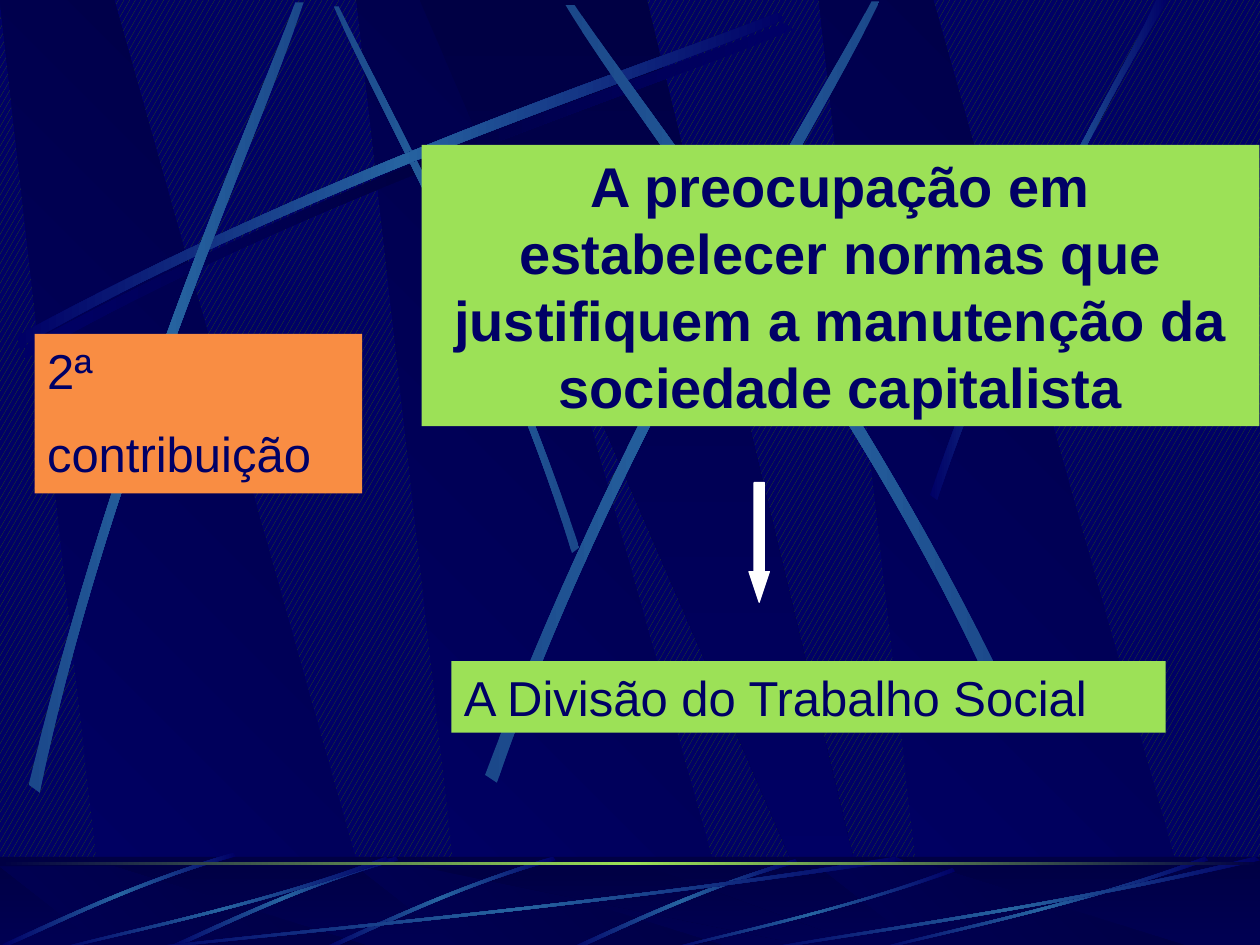
from copy import deepcopy

from lxml import etree
from pptx import Presentation
from pptx.dml.color import RGBColor
from pptx.enum.dml import MSO_PATTERN
from pptx.enum.shapes import MSO_SHAPE
from pptx.enum.text import MSO_ANCHOR, PP_ALIGN
from pptx.oxml.ns import qn
from pptx.util import Cm, Pt

RECT, DOWN_ARROW = MSO_SHAPE.RECTANGLE, MSO_SHAPE.DOWN_ARROW
CONFETTI = MSO_PATTERN.LARGE_CONFETTI
LEFT, CENTER = PP_ALIGN.LEFT, PP_ALIGN.CENTER
TOP = MSO_ANCHOR.TOP

NAVY = RGBColor(0x00, 0x00, 0x66)
MIDNIGHT = RGBColor(0x00, 0x00, 0x44)
STEEL = RGBColor(0x26, 0x63, 0xA0)
DEEP_STEEL = RGBColor(0x1B, 0x48, 0x8A)
OLIVE = RGBColor(0x2D, 0x55, 0x13)
GREEN = RGBColor(0x9C, 0xE1, 0x57)
ORANGE = RGBColor(0xF9, 0x8D, 0x43)
WHITE = RGBColor(0xFF, 0xFF, 0xFF)

GLOW = (NAVY, STEEL, NAVY)
SOFT_GLOW = (DEEP_STEEL, STEEL, DEEP_STEEL)
SHADE = (NAVY, MIDNIGHT, NAVY)

SLAB = [(0.28, 1), (1, 1), (0.3, 0), (0, 0)]
WEDGE = [(0, 0), (0.9, 1), (1, 1), (0.5, 0)]
ARC = [(0, 0.96), (0.43, 0.43), (0.83, 0.15), (0.99, 0),
       (1, 0.02), (0.83, 0.19), (0.38, 0.5), (0, 1)]
SHAFT = [(0, 0.99), (0.32, 0.53), (0.8, 0.16), (0.97, 0),
         (1, 0), (0.84, 0.17), (0.29, 0.58), (0.04, 1)]
STREAK = [(0, 0.99), (0.35, 0.52), (0.81, 0.16), (0.98, 0),
          (1, 0), (0.84, 0.17), (0.32, 0.57), (0.03, 1)]
GLINT = [(0, 0.99), (0.4, 0.44), (0.79, 0.17), (0.95, 0),
         (1, 0), (0.52, 0.37), (0.16, 0.81), (0.03, 1)]
SWEEP = [(0.99, 0), (0.54, 0.33), (0.16, 0.8), (0, 0.97),
         (0.01, 1), (0.17, 0.84), (0.58, 0.31), (1, 0.04)]
BLADE = [(1, 0.04), (0.57, 0.57), (0.17, 0.85), (0.01, 1),
         (0, 0.99), (0.17, 0.81), (0.62, 0.51), (0.99, 0)]


def paint(sp, colors, angle=0):
    """Fill a shape with one colour or evenly spaced gradient colours."""
    sp.shadow.inherit = False
    sp.line.fill.background()
    if len(colors) == 1:
        sp.fill.solid()
        sp.fill.fore_color.rgb = colors[0]
        return
    sp.fill.gradient()
    sp.fill.gradient_angle = angle
    stops = sp.element.spPr.find(".//" + qn("a:gsLst"))
    for _ in colors[2:]:
        stops.append(deepcopy(stops[0]))
    for i, (stop, color) in enumerate(zip(sp.fill.gradient_stops, colors)):
        stop.position = i / (len(colors) - 1)
        stop.color.rgb = color


def add_block(s, x, y, w, h, *colors, angle=0, kind=RECT):
    """Add a preset shape."""
    sp = s.shapes.add_shape(kind, Cm(x), Cm(y), Cm(w), Cm(h))
    paint(sp, colors, angle)
    return sp


def add_outline(s, points, x, y, w, h, *colors, angle=0, flip=False):
    """Add a closed outline whose unit points are scaled to the box."""
    pts = [(Cm(x + w * (1 - u if flip else u)), Cm(y + h * v)) for u, v in points]
    builder = s.shapes.build_freeform(*pts[0])
    builder.add_line_segments(pts[1:], close=True)
    sp = builder.convert_to_shape()
    paint(sp, colors, angle)
    return sp


def add_ribbon(s, points, x, y, w, h, *colors, flip=False):
    """Add a band whose two long edges are cubic curves."""
    sp = add_outline(s, points, x, y, w, h, *colors, flip=flip)
    lines = sp.element.spPr.findall(".//" + qn("a:lnTo"))
    for edge in (lines[:3], lines[4:]):
        cubic = etree.Element(qn("a:cubicBezTo"))
        edge[0].addprevious(cubic)
        for line in edge:
            cubic.append(line[0])
            line.getparent().remove(line)


def add_text(sp, text, size=28, bold=False, align=LEFT, color=NAVY, space=14):
    """Write one paragraph per line of text."""
    tf = sp.text_frame
    tf.word_wrap = True
    tf.vertical_anchor = TOP
    for i, line in enumerate(text.split("\n")):
        p = tf.add_paragraph() if i else tf.paragraphs[0]
        p.alignment = align
        if i:
            p.space_before = Pt(space)
        r = p.add_run()
        r.text = line
        r.font.name, r.font.size, r.font.bold = "Arial", Pt(size), bold
        r.font.color.rgb = color


def draw_slabs(s, x, y, h):
    """Draw the slanted shadows over a band of the given height."""
    for dx in (7.19, 0, 16.51):
        add_outline(s, SLAB, x + dx, y, 7.67, h, NAVY, MIDNIGHT, angle=45)
    add_outline(s, WEDGE, x + 8.46, y, 9.17, h, MIDNIGHT, NAVY, angle=270)


def draw_beams(s, x, y):
    """Draw the large light beams."""
    draw_slabs(s, x, y, 19.1)
    add_ribbon(s, ARC, x + 0.51, y + 0.46, 15.47, 6.78, *SHADE)
    add_ribbon(s, STREAK, x + 6.73, y + 0.13, 4.95, 11.02, *SOFT_GLOW, flip=True)
    add_ribbon(s, ARC, x + 0.36, y + 0.25, 15.47, 6.78, *GLOW)
    add_ribbon(s, SHAFT, x + 0.58, y + 0.05, 5.54, 15.93, *SOFT_GLOW)
    add_ribbon(s, STREAK, x + 9.78, y + 0.03, 7.95, 15.75, *SOFT_GLOW)
    add_ribbon(s, STREAK, x + 11.4, y + 0.1, 9.07, 14.3, *SOFT_GLOW, flip=True)
    add_ribbon(s, GLINT, x + 18.75, y, 4.8, 10.08, *GLOW)


def draw_footer(s, x, y, w, h):
    """Draw the bottom band with its ribbons and rule."""
    add_block(s, x, y, w, h, MIDNIGHT, NAVY, angle=270)
    draw_slabs(s, x, y + 0.2, h - 0.22)
    veil = add_block(s, x, y, w, h, MIDNIGHT)
    color = veil.element.spPr.find(".//" + qn("a:srgbClr"))
    etree.SubElement(color, qn("a:alpha"), val="50000")
    for dx, dy in ((11.38, 0.05), (6.5, 0), (3.33, 0), (0.05, -0.08)):
        add_ribbon(s, SWEEP, x + dx, y + dy, 4.7, 1.9, *GLOW)
    for dx, dy, width in ((2.54, 0, 15.67), (1.07, 0, 6.78), (13.39, 0.23, 5.87),
                          (17.58, 0, 6.78), (15.24, 0, 10.16)):
        add_ribbon(s, BLADE, x + dx, y + dy, width, h - dy, *GLOW)
    add_block(s, x, y + 0.1, w, 0.06, MIDNIGHT, GREEN, MIDNIGHT)


def draw_content(s, x, y):
    """Draw the label, the statement, the conclusion and the arrow."""
    add_text(add_block(s, x, y + 3.81, 6.6, 3.22, ORANGE), "2ª\ncontribuição")
    add_text(add_block(s, x + 7.8, y, 16.89, 5.67, GREEN),
             "A preocupação em estabelecer normas que justifiquem "
             "a manutenção da sociedade capitalista",
             size=32, bold=True, align=CENTER)
    add_text(add_block(s, x + 8.4, y + 10.41, 14.4, 1.44, GREEN),
             "A Divisão do Trabalho Social")
    arrow = add_block(s, x + 14.4, y + 6.81, 0.41, 2.41, WHITE, kind=DOWN_ARROW)
    arrow.adjustments[0], arrow.adjustments[1] = 0.5, 1.5
    arrow.line.color.rgb = WHITE
    arrow.line.width = Pt(0.75)


def main():
    """Build and save the slide."""
    prs = Presentation()
    prs.slide_width, prs.slide_height = Cm(25.4), Cm(19.05)
    s = prs.slides.add_slide(prs.slide_layouts[6])
    fill = s.background.fill
    fill.patterned()
    fill.pattern = CONFETTI
    fill.fore_color.rgb = OLIVE
    fill.back_color.rgb = NAVY
    draw_beams(s, 0, 0)
    draw_footer(s, 0, 17.27, 25.4, 1.9)
    draw_content(s, 0.7, 2.92)
    prs.save("out.pptx")


if __name__ == "__main__":
    main()
